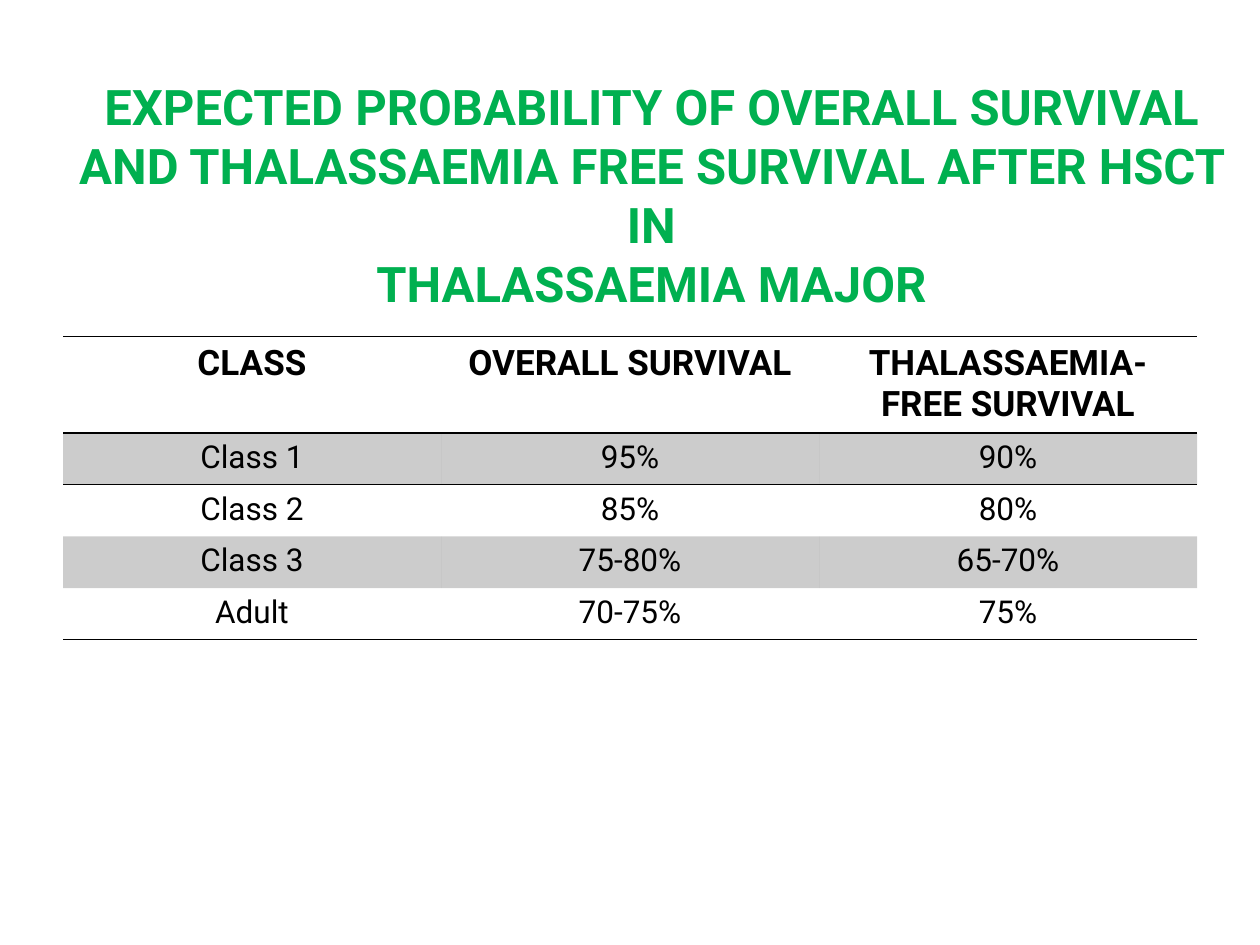
from lxml import etree
from pptx import Presentation, util as u
from pptx.dml import color
from pptx.enum import text
from pptx.oxml import ns

FONT, BLACK, GREEN = "Roboto", "000000", "00B050"
NO_STYLE = "{2D5ABB26-0587-4C30-8999-92F81FD0307C}"
TITLE = ["EXPECTED PROBABILITY OF OVERALL SURVIVAL AND THALASSAEMIA FREE SURVIVAL AFTER HSCT IN",
         "THALASSAEMIA MAJOR"]
SURVIVAL = [["CLASS", "OVERALL SURVIVAL", "THALASSAEMIA-FREE SURVIVAL"],
            ["Class 1", "95%", "90%"],
            ["Class 2", "85%", "80%"],
            ["Class 3", "75-80%", "65-70%"],
            ["Adult", "70-75%", "75%"]]


def rgb(value):
    """Turn a hex string into a colour."""
    return color.RGBColor.from_string(value)


def add_run(p, words, size, bold, hue):
    """Add one formatted run to a centred paragraph."""
    p.alignment = text.PP_ALIGN.CENTER
    r = p.add_run()
    r.text = words
    r.font.name, r.font.size, r.font.bold = FONT, u.Pt(size), bold
    r.font.color.rgb = rgb(hue)


def add_title(s, box, lines):
    """Place the title, with a line break between its lines."""
    tf = s.shapes.add_textbox(*map(u.Inches, box)).text_frame
    tf.word_wrap = True
    p = tf.paragraphs[0]
    for i, line in enumerate(lines):
        if i:
            p.add_line_break()
        add_run(p, line, 28, True, GREEN)


def fill_cell(cell, shaded):
    """Shade a cell with 20% black, or leave it clear."""
    if not shaded:
        cell.fill.background()
        return
    cell.fill.solid()
    cell.fill.fore_color.rgb = rgb(BLACK)
    clr = cell._tc.tcPr.find(".//" + ns.qn("a:srgbClr"))
    etree.SubElement(clr, ns.qn("a:alpha"), val="20000")


def rule_cell(cell, sides):
    """Draw a one-point rule on each of the given sides."""
    for i, side in enumerate(sides):
        ln = etree.Element(ns.qn("a:ln" + side), w=str(u.Pt(1)))
        paint = etree.SubElement(ln, ns.qn("a:solidFill"))
        etree.SubElement(paint, ns.qn("a:srgbClr"), val=BLACK)
        cell._tc.get_or_add_tcPr().insert(i, ln)


def add_survival_table(s, box, rows, head_height):
    """Place the survival table with a taller header and equal body rows."""
    table = s.shapes.add_table(len(rows), len(rows[0]), *map(u.Inches, box)).table
    table.first_row = table.horz_banding = False
    table._tbl.tblPr.find(ns.qn("a:tableStyleId")).text = NO_STYLE
    last = len(rows) - 1
    sides = {0: "TB", 1: "T", last: "B"}
    for i, row in enumerate(rows):
        height = (box[3] - head_height) / last if i else head_height
        table.rows[i].height = u.Inches(height)
        for j, words in enumerate(row):
            cell = table.cell(i, j)
            add_run(cell.text_frame.paragraphs[0], words, 18 if i else 20, i == 0, BLACK)
            fill_cell(cell, i % 2 == 1)
            rule_cell(cell, sides.get(i, ""))


def main():
    """Build and save the slide."""
    prs = Presentation()
    prs.slide_width, prs.slide_height = u.Inches(10), u.Inches(7.5)
    s = prs.slides.add_slide(prs.slide_layouts[6])
    add_title(s, (0.42, 0.56, 9.5, 1.83), TITLE)
    add_survival_table(s, (0.5, 2.67, 9, 2.39), SURVIVAL, 0.75)
    prs.save("out.pptx")


if __name__ == "__main__":
    main()
